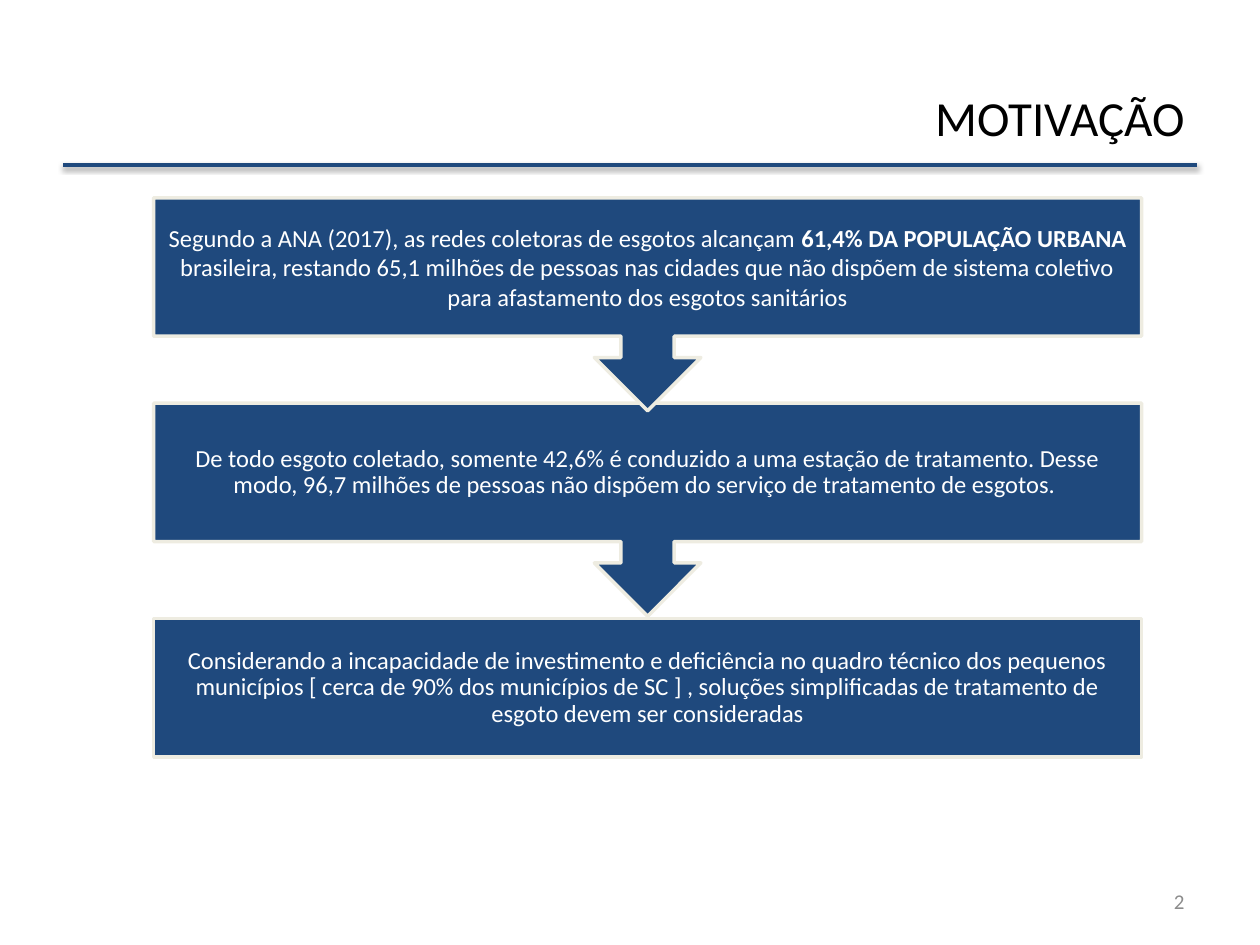
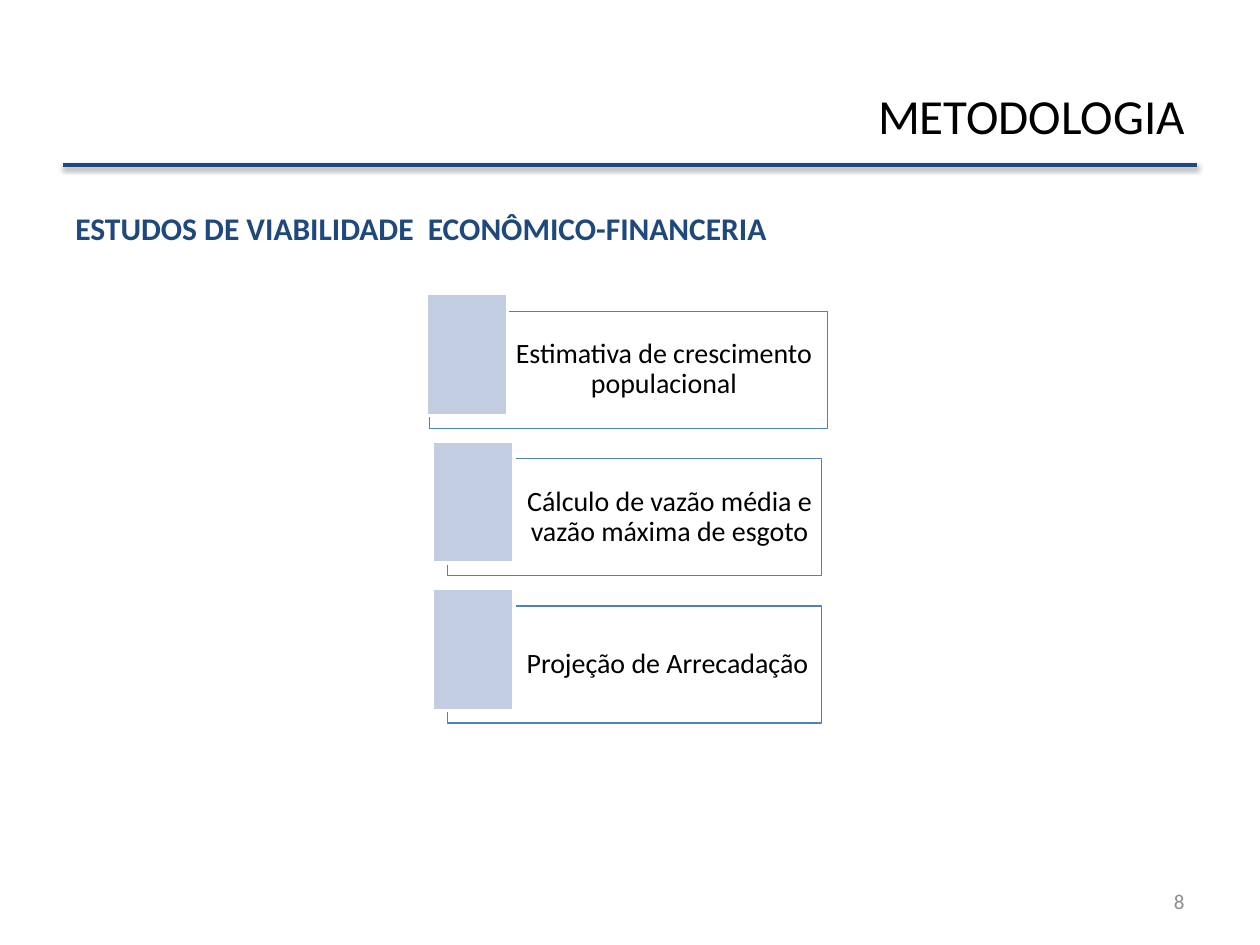
from lxml import etree
from pptx import Presentation
from pptx.dml.color import RGBColor
from pptx.enum.shapes import MSO_CONNECTOR, MSO_SHAPE
from pptx.enum.text import MSO_ANCHOR, PP_ALIGN
from pptx.oxml.ns import qn
from pptx.util import Inches, Pt

LEFT, MID, RIGHT = PP_ALIGN.LEFT, PP_ALIGN.CENTER, PP_ALIGN.RIGHT
TOP, CENTER = MSO_ANCHOR.TOP, MSO_ANCHOR.MIDDLE
RECT, CALLOUT = MSO_SHAPE.RECTANGLE, MSO_SHAPE.DOWN_ARROW_CALLOUT
STRAIGHT = MSO_CONNECTOR.STRAIGHT

NAVY = RGBColor(0x1F, 0x49, 0x7D)
BLUE = RGBColor(0x4F, 0x81, 0xBD)
PALE = RGBColor(0xC2, 0xCD, 0xE1)
CREAM = RGBColor(0xEE, 0xEC, 0xE1)
GRAY = RGBColor(0x8C, 0x8C, 0x8C)
BLACK = RGBColor(0, 0, 0)
WHITE = RGBColor(255, 255, 255)

FONT = "Calibri"
COLS, ROWS = 20, 15
CELL = Inches(10) // COLS
INSET = (0.1, 0.05, 0.1, 0.05)


def grid(*cells):
    """Turn columns and rows of the slide grid into lengths."""
    return [int(n * CELL) for n in cells]


def write(shape, text, size=14, color=BLACK, bold=False, align=LEFT,
          anchor=CENTER, inset=INSET, space=1.0):
    """Fill a shape with one paragraph; parts between ** marks turn bold."""
    frame = shape.text_frame
    frame.word_wrap = True
    frame.vertical_anchor = anchor
    (frame.margin_left, frame.margin_top,
     frame.margin_right, frame.margin_bottom) = map(Inches, inset)
    para = frame.paragraphs[0]
    para.alignment = align
    para.line_spacing = space
    for i, part in enumerate(text.split("**")):
        run = para.add_run()
        run.text = part
        font = run.font
        font.name, font.size = FONT, Pt(size)
        font.bold = bold or i % 2 == 1
        font.color.rgb = color


def label(slide, at, text, **style):
    write(slide.shapes.add_textbox(*grid(*at)), text, **style)


def block(slide, kind, at, fill, line, width, alpha=None):
    shape = slide.shapes.add_shape(kind, *grid(*at))
    shape.shadow.inherit = False
    shape.fill.solid()
    shape.fill.fore_color.rgb = fill
    shape.line.color.rgb = line
    shape.line.width = Pt(width)
    if alpha:
        tint = shape.fill._xPr.find(".//" + qn("a:srgbClr"))
        etree.SubElement(tint, qn("a:alpha"), val=str(alpha * 1000))
    return shape


def rule(slide):
    """Draw the navy line under the title, with its soft shadow."""
    line = slide.shapes.add_connector(STRAIGHT, *grid(1, 2.62, COLS - 1, 2.62))
    line.line.color.rgb = NAVY
    line.line.width = Pt(2)
    effects = etree.SubElement(line._element.spPr, qn("a:effectLst"))
    shade = etree.SubElement(
        effects, qn("a:outerShdw"), blurRad=str(Pt(3.1)), dist=str(Pt(1.6)),
        dir="5400000", rotWithShape="0")
    tint = etree.SubElement(shade, qn("a:srgbClr"), val="000000")
    etree.SubElement(tint, qn("a:alpha"), val="38000")


def page(deck, title, number, top=0.6):
    slide = deck.slides.add_slide(deck.slide_layouts[6])
    label(slide, (1, top, COLS - 2, 2.5), title, size=28, align=RIGHT)
    label(slide, (14.34, 13.9, 4.66, 0.8), number, size=12, color=GRAY,
          align=RIGHT)
    rule(slide)
    return slide


def flow(slide, steps):
    """Stack the steps from last to first, so each arrow overlaps the next."""
    for kind, top, high, space, text in reversed(steps):
        shape = block(slide, kind, (2.44, top, 15.68, high), NAVY, CREAM, 2)
        write(shape, text, color=WHITE, align=MID, inset=(0.11,) * 4,
              space=space)


def cards(slide, items):
    """Draw framed cards, each with a pale tab over its upper left corner."""
    for i, (left, wide, tab, align, text) in enumerate(items):
        top = 4.94 + 2.34 * i
        card = block(slide, RECT, (left, top, wide, 1.86), WHITE, BLUE, 0.75,
                     alpha=40)
        write(card, text, size=16, align=align, space=0.9,
              inset=(0.63, 0.07, 0.07, 0.07))
        block(slide, RECT, (tab, top - 0.28, 1.3, 1.94), PALE, WHITE, 2)


def main():
    deck = Presentation()
    deck.slide_width, deck.slide_height = grid(COLS, ROWS)

    slide = page(deck, "MOTIVAÇÃO", "2")
    flow(slide, [
        (CALLOUT, 3.14, 3.38, 1.0,
         "Segundo a ANA (2017), as redes coletoras de esgotos alcançam "
         "**61,4% DA POPULAÇÃO URBANA **brasileira, restando 65,1 milhões de "
         "pessoas nas cidades que não dispõem de sistema coletivo para "
         "afastamento dos esgotos sanitários"),
        (CALLOUT, 6.4, 3.38, 0.9,
         "De todo esgoto coletado, somente 42,6% é conduzido a uma estação "
         "de tratamento. Desse modo, 96,7 milhões de pessoas não dispõem do "
         "serviço de tratamento de esgotos. "),
        (RECT, 9.82, 2.2, 0.9,
         "Considerando a incapacidade de investimento e deficiência no "
         "quadro técnico dos pequenos municípios [ cerca de 90% dos "
         "municípios de SC ] , soluções simplificadas de tratamento de "
         "esgoto devem ser consideradas"),
    ])

    slide = page(deck, "METODOLOGIA", "8", top=0.58)
    label(slide, (1, 3.22, 12, 0.8),
          "ESTUDOS DE VIABILIDADE  ECONÔMICO-FINANCERIA",
          size=18, color=NAVY, bold=True, anchor=TOP)
    cards(slide, [
        (6.82, 6.32, 6.76, MID, "Estimativa de crescimento populacional"),
        (7.1, 5.94, 6.86, MID,
         "Cálculo de vazão média e vazão máxima de esgoto"),
        (7.1, 5.94, 6.86, LEFT, "Projeção de Arrecadação"),
    ])

    deck.save("out.pptx")


if __name__ == "__main__":
    main()
